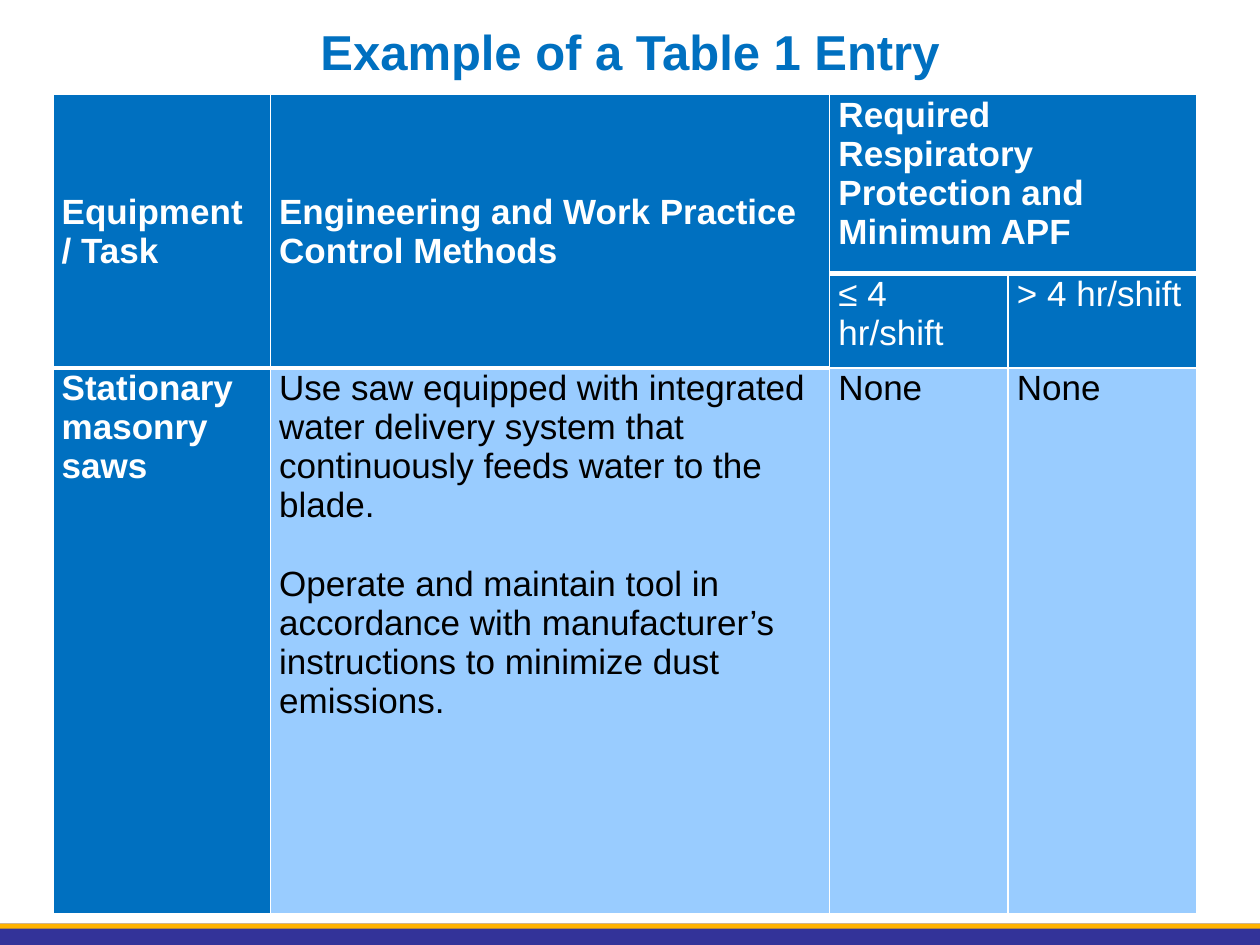
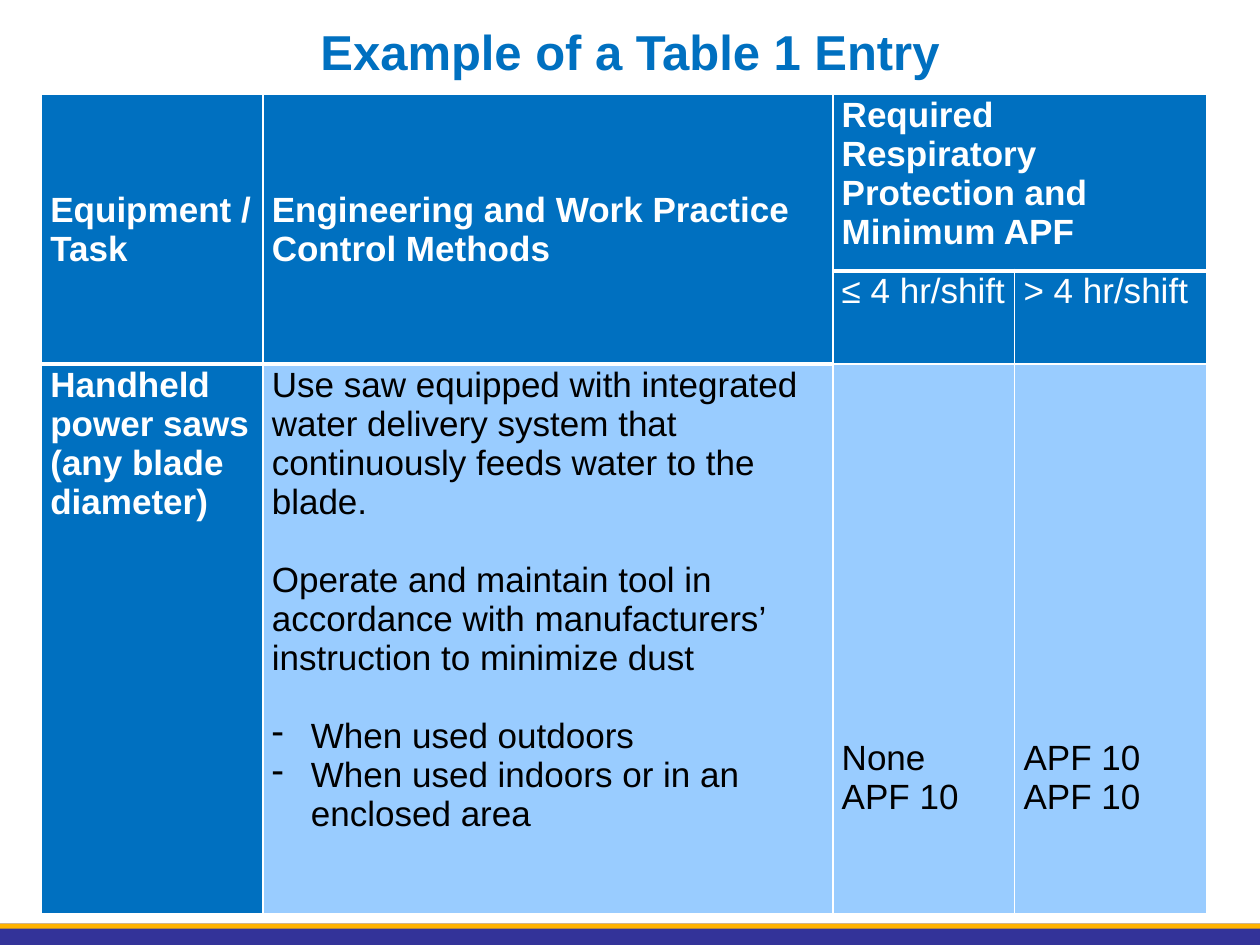
from lxml import etree
from pptx import Presentation, util as u
from pptx.dml.color import RGBColor
from pptx.enum import shapes, text
from pptx.oxml import ns

WIDE, HIGH = 10, 7.5
FONT = "Arial"
BLUE, PALE, WHITE, BLACK = "0070C0", "99CCFF", "FFFFFF", "000000"
NAVY, GOLD = "333399", "FFB300"
SIZE, GAP = 20, 22.4
SHARES = (19, 48.9, 15.6, 16.5)
HEADS = [
    ["Equipment / Task", "Engineering and Work Practice Control Methods",
     "Required Respiratory Protection and\nMinimum APF", ""],
    ["", "", "≤ 4 hr/shift", "> 4 hr/shift"],
]
WATER = ("Use saw equipped with integrated water delivery system that "
         "continuously feeds water to the blade.\n\n")


def tint(code):
    """Turn a hex string into a colour."""
    return RGBColor.from_string(code)


def style(font, size, code, bold):
    """Set the look of a font."""
    font.name, font.size, font.bold = FONT, u.Pt(size), bold
    font.color.rgb = tint(code)


def add_band(slide, layout, high, code):
    """Put a full-width band near the foot of the layout."""
    band = slide.shapes.add_shape(
        shapes.MSO_SHAPE.RECTANGLE, 0, u.Inches(HIGH - 0.17),
        u.Inches(WIDE), u.Inches(high))
    band.shadow.inherit = False
    band.fill.solid()
    band.fill.fore_color.rgb = tint(code)
    band.line.fill.background()
    layout.shapes.element.append(band.element)


def set_title(slide, words):
    """Place and format the title."""
    title = slide.shapes.title
    title.left, title.top = u.Inches(0.05 * WIDE), u.Inches(0.08)
    title.width, title.height = u.Inches(0.9 * WIDE), u.Inches(0.1 * HIGH)
    frame = title.text_frame
    frame.text = words
    frame.vertical_anchor = text.MSO_ANCHOR.MIDDLE
    frame.margin_bottom = u.Inches(0.15)
    para = frame.paragraphs[0]
    para.alignment = text.PP_ALIGN.CENTER
    style(para.font, 28, BLUE, True)


def add_dash(para):
    """Give a paragraph a hanging dash."""
    props = para._p.get_or_add_pPr()
    props.set("marL", str(u.Inches(0.31)))
    props.set("indent", str(-u.Inches(0.31)))
    etree.SubElement(props, ns.qn("a:buChar"), char="-")


def set_edge(cell, row, col):
    """Draw white borders, heavy below the heads."""
    def heavy(line):
        return line == 0 or (line == 1 and col < 2)

    props = cell._tc.get_or_add_tcPr()
    points = {"L": 1, "R": 1, "T": 3 if heavy(row - 1) else 1,
              "B": 3 if heavy(row) else 1}
    for spot, (side, width) in enumerate(points.items()):
        edge = etree.Element(ns.qn("a:ln" + side), w=str(u.Pt(width)))
        fill = etree.SubElement(edge, ns.qn("a:solidFill"))
        etree.SubElement(fill, ns.qn("a:srgbClr"), val=WHITE)
        props.insert(spot, edge)


def write(cell, words, code, bold):
    """Fill a cell; a blank line in the words opens a gap."""
    frame = cell.text_frame
    first = True
    for block in words.split("\n\n"):
        for spot, line in enumerate(block.split("\n")):
            para = frame.paragraphs[0] if first else frame.add_paragraph()
            if not first and spot == 0:
                para.space_before = u.Pt(GAP)
            if line.startswith("- "):
                add_dash(para)
            para.text = line.removeprefix("- ")
            style(para.font, SIZE, code, bold)
            first = False


def set_cell(cell, row, col, words):
    """Format one cell by its place in the table."""
    head = row < 2 or col == 0
    cell.margin_left = cell.margin_right = u.Inches(0.07)
    cell.margin_top, cell.margin_bottom = u.Inches(0.01), 0
    set_edge(cell, row, col)
    cell.fill.solid()
    cell.fill.fore_color.rgb = tint(BLUE if head else PALE)
    write(cell, words, WHITE if head else BLACK, row == 0 or col == 0)


def add_entry(slide, left, wide, highs, entry):
    """Add the table with its shared heads and one entry."""
    rows = HEADS + [entry]
    table = slide.shapes.add_table(
        len(rows), len(SHARES), u.Inches(left), u.Inches(0.1 * HIGH),
        u.Inches(wide), u.Inches(sum(highs))).table
    table.first_row = table.horz_banding = False
    for column, share in zip(table.columns, SHARES):
        column.width = u.Inches(wide * share / 100)
    for line, high in zip(table.rows, highs):
        line.height = u.Inches(high)
    for row, items in enumerate(rows):
        for col, words in enumerate(items):
            set_cell(table.cell(row, col), row, col, words)
    for col in (0, 1):
        table.cell(0, col).merge(table.cell(1, col))
        table.cell(0, col).vertical_anchor = text.MSO_ANCHOR.MIDDLE
    table.cell(0, 2).merge(table.cell(0, 3))
    return table


def main():
    """Build both slides."""
    deck = Presentation()
    deck.slide_width, deck.slide_height = u.Inches(WIDE), u.Inches(HIGH)
    layout = deck.slide_layouts[5]
    fixed, held = [deck.slides.add_slide(layout) for _ in range(2)]
    add_band(fixed, layout, 0.17, NAVY)
    add_band(fixed, layout, 0.04, GOLD)
    for slide in (fixed, held):
        set_title(slide, "Example of a Table 1 Entry")

    add_entry(fixed, 0.42, 9.08, (1.42, 0.75, 4.33), [
        "Stationary masonry saws",
        WATER + "Operate and maintain tool in accordance with manufacturer’s "
        "instructions to minimize dust emissions.",
        "None", "None"])
    table = add_entry(held, 0.33, 9.25, (1.4, 0.74, 4.36), [
        "Handheld power saws\n(any blade diameter)",
        WATER + "Operate and maintain tool in accordance with manufacturers’ "
        "instruction to minimize dust\n\n- When used outdoors\n"
        "- When used indoors or in an enclosed area",
        "None\nAPF 10", "APF 10\nAPF 10"])
    for col in (2, 3):
        cell = table.cell(2, col)
        cell.vertical_anchor = text.MSO_ANCHOR.BOTTOM
        cell.margin_bottom = u.Inches(0.77)
    deck.save("out.pptx")


if __name__ == "__main__":
    main()
